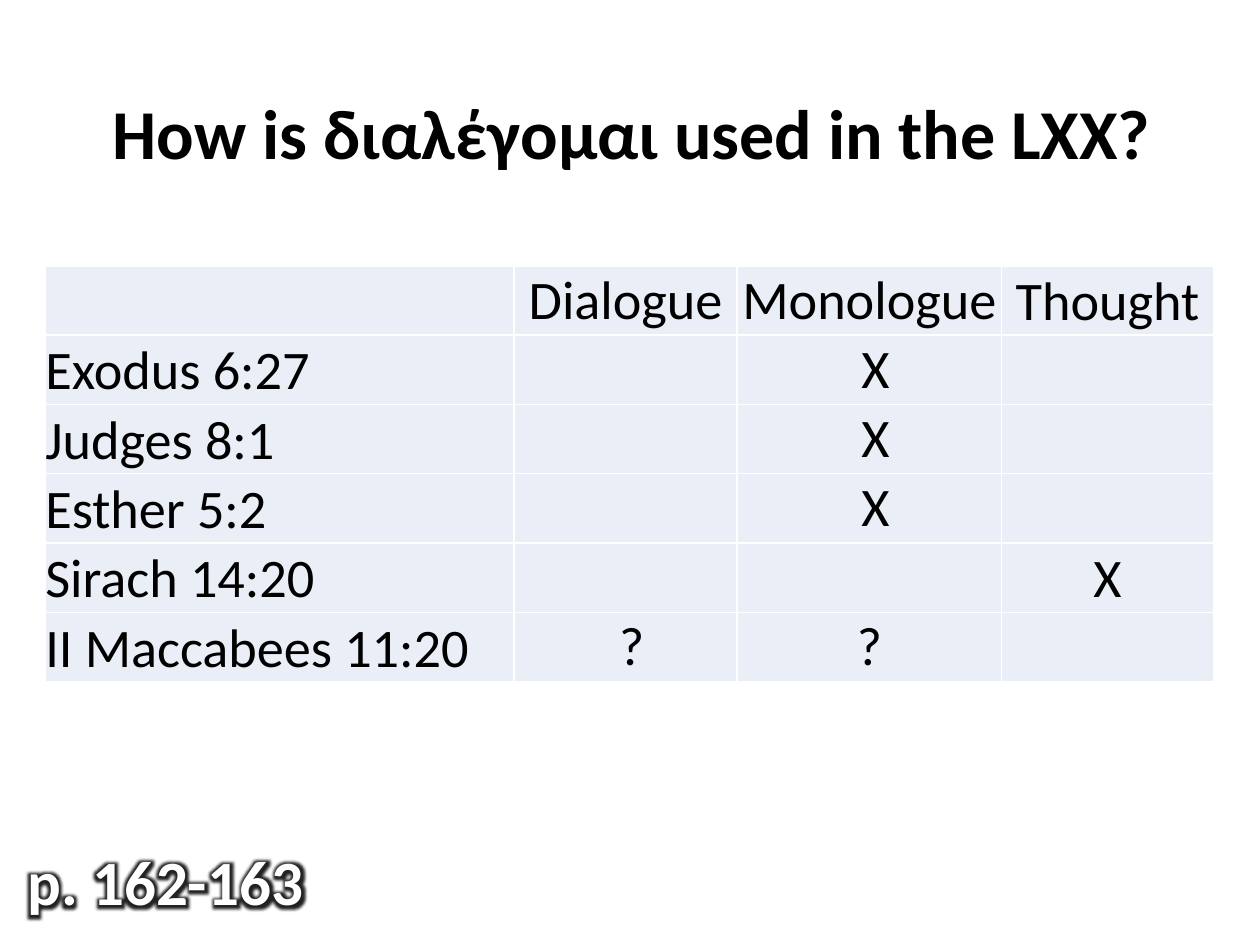
"""Build the slide on the uses of διαλέγομαι in the LXX."""
from lxml import etree
from pptx import Presentation
from pptx.dml.color import RGBColor
from pptx.enum.text import MSO_ANCHOR, MSO_AUTO_SIZE, PP_ALIGN
from pptx.oxml import parse_xml
from pptx.oxml.ns import qn
from pptx.util import Inches, Pt

LEFT, CENTER = PP_ALIGN.LEFT, PP_ALIGN.CENTER
MIDDLE, BOTTOM = MSO_ANCHOR.MIDDLE, MSO_ANCHOR.BOTTOM
GROW = MSO_AUTO_SIZE.SHAPE_TO_FIT_TEXT
DRAWING = "http://schemas.openxmlformats.org/drawingml/2006/main"

TITLE = "How is διαλέγομαι used in the LXX?"
PAGES = "p. 162-163"
ROWS = [
    ("", "Dialogue", "Monologue", "Thought"),
    ("Exodus 6:27", "", " X", ""),
    ("Judges 8:1", "", " X", ""),
    ("Esther 5:2", "", " X", ""),
    ("Sirach 14:20", "", "", "X"),
    ("II Maccabees 11:20", " ?", "?", ""),
]
COLUMNS = [
    (3.72, LEFT, BOTTOM),
    (1.77, CENTER, MIDDLE),
    (2.1, CENTER, MIDDLE),
    (1.68, CENTER, BOTTOM),
]
ROW_HEIGHT = 0.55
THEME = {
    "font": "Calibri",
    "ink": "000000",
    "paper": "FFFFFF",
    "cell": "EAEFF7",
    "glow": "222222",
    "title": 40,
    "pages": 36,
    "table": 31,
}


def assign(target, values):
    for name, value in values.items():
        setattr(target, name, value)


def write(frame, text, size, color, align, bold=False):
    para = frame.paragraphs[0]
    para.alignment = align
    span = para.add_run()
    span.text = text
    assign(span.font, {"name": THEME["font"], "size": Pt(size), "bold": bold})
    span.font.color.rgb = RGBColor.from_string(color)
    return span


def place(shape, left, top, width, height):
    assign(shape, {"left": Inches(left), "top": Inches(top),
                   "width": Inches(width), "height": Inches(height)})
    assign(shape.text_frame, {"word_wrap": False, "auto_size": GROW})


def add_glow(span, radius):
    effects = parse_xml(
        f'<a:effectLst xmlns:a="{DRAWING}"><a:glow rad="{Pt(radius)}">'
        f'<a:srgbClr val="{THEME["glow"]}"/></a:glow></a:effectLst>')
    span.font.fill.solid()
    span.font.color.rgb = RGBColor.from_string(THEME["paper"])
    span.font._element.find(qn("a:solidFill")).addnext(effects)


def add_borders(cell):
    properties = cell._tc.get_or_add_tcPr()
    for index, side in enumerate(("lnL", "lnR", "lnT", "lnB")):
        line = etree.Element(qn(f"a:{side}"), w=str(Pt(1)))
        fill = etree.SubElement(line, qn("a:solidFill"))
        etree.SubElement(fill, qn("a:srgbClr"), val=THEME["paper"])
        properties.insert(index, line)


def add_uses(page):
    width = sum(column[0] for column in COLUMNS)
    table = page.shapes.add_table(
        len(ROWS), len(COLUMNS), Inches(0.36), Inches(2.11),
        Inches(width), Inches(ROW_HEIGHT * len(ROWS))).table
    for column, (size, _, _) in zip(table.columns, COLUMNS):
        column.width = Inches(size)
    for row, texts in zip(table.rows, ROWS):
        row.height = Inches(ROW_HEIGHT)
        for cell, text, (_, align, anchor) in zip(row.cells, texts, COLUMNS):
            assign(cell, {"margin_left": 0, "margin_right": 0, "margin_top": 0,
                          "margin_bottom": 0, "vertical_anchor": anchor})
            cell.fill.solid()
            cell.fill.fore_color.rgb = RGBColor.from_string(THEME["cell"])
            add_borders(cell)
            if text:
                write(cell.text_frame, text, THEME["table"], THEME["ink"], align)


def main():
    deck = Presentation()
    assign(deck, {"slide_width": Inches(10), "slide_height": Inches(7.5)})
    page = deck.slides.add_slide(deck.slide_layouts[5])
    title = page.shapes.title
    place(title, 0.75, 0.66, 8.53, 0.77)
    write(title.text_frame, TITLE, THEME["title"], THEME["ink"], CENTER, True)
    box = page.shapes.add_textbox(0, 0, 0, 0)
    place(box, 0.12, 6.64, 2.41, 0.71)
    span = write(box.text_frame, PAGES, THEME["pages"], THEME["paper"], LEFT, True)
    add_glow(span, 8)
    add_uses(page)
    deck.save("out.pptx")


if __name__ == "__main__":
    main()
